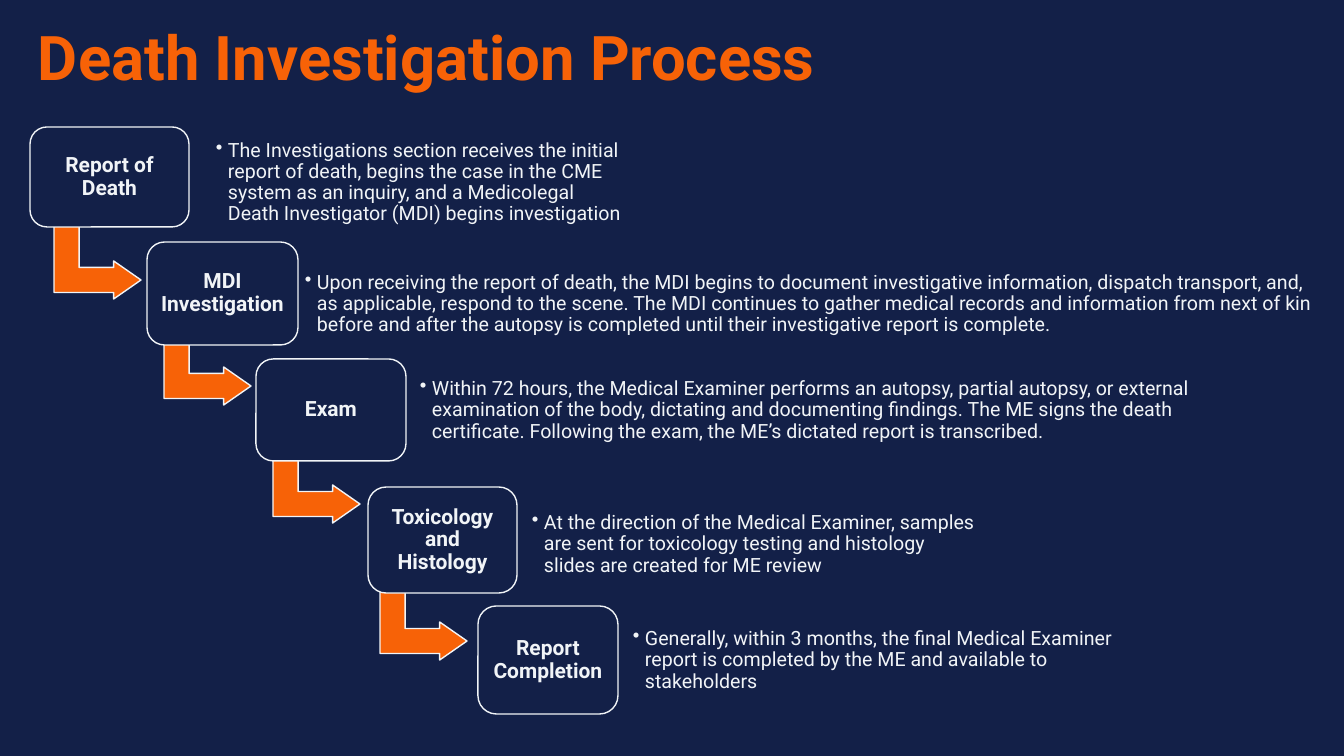
from collections import namedtuple

from lxml.etree import SubElement
from pptx import Presentation
from pptx.dml.color import RGBColor
from pptx.enum.shapes import MSO_SHAPE
from pptx.enum.text import MSO_ANCHOR, PP_ALIGN
from pptx.oxml.ns import qn
from pptx.util import Emu, Pt

EMU_PER_PIXEL = 914400 / 100.8
FONT = "Roboto"
COLORS = {"navy": "132048", "orange": "F76207", "white": "F1F4F7"}
INSET = 6
HANGING = 12
ARROW_WIDTH, ARROW_HEIGHT = 87, 76

Box = namedtuple("Box", "left top width height")
Step = namedtuple("Step", "label detail label_box detail_box arrow_corner")

STEPS = [
    Step("Report of Death",
         "The Investigations section receives the initial report of death, begins the case "
         "in the CME system as an inquiry, and a Medicolegal Death Investigator (MDI) begins "
         "investigation",
         Box(30, 127, 159, 100), Box(210, 146, 419, 73), (54, 223)),
    Step("MDI Investigation",
         "Upon receiving the report of death, the MDI begins to document investigative "
         "information, dispatch transport, and, as applicable, respond to the scene. The MDI "
         "continues to gather medical records and information from next of kin before and "
         "after the autopsy is completed until their investigative report is complete.",
         Box(147, 242, 151, 103), Box(299, 275, 1025, 58), (164, 329)),
    Step("Exam",
         "Within 72 hours, the Medical Examiner performs an autopsy, partial autopsy, or "
         "external examination of the body, dictating and documenting findings. The ME signs "
         "the death certificate. Following the exam, the ME’s dictated report is transcribed.",
         Box(256, 359, 150, 102), Box(414, 374, 830, 73), (273, 447)),
    Step("Toxicology and Histology",
         "At the direction of the Medical Examiner, samples are sent for toxicology testing "
         "and histology slides are created for ME review",
         Box(368, 487, 149, 106), Box(526, 508, 457, 73), (380, 584)),
    Step("Report Completion",
         "Generally, within 3 months, the final Medical Examiner report is completed by the "
         "ME and available to stakeholders",
         Box(478, 606, 140, 108), Box(627, 624, 499, 73), None),
]


def px(value):
    return Emu(round(value * EMU_PER_PIXEL))


def place(box):
    return [px(value) for value in box]


def color(name):
    return RGBColor.from_string(COLORS[name])


def write(shape, text, size, color_name, bold=False, align=PP_ALIGN.LEFT, inset=INSET,
          bullet=False):
    frame = shape.text_frame
    frame.word_wrap = True
    frame.vertical_anchor = MSO_ANCHOR.MIDDLE
    frame.margin_left = frame.margin_right = px(inset)
    frame.margin_top = frame.margin_bottom = px(INSET)
    para = frame.paragraphs[0]
    para.alignment = align
    para.line_spacing = 0.9
    if bullet:
        properties = para._p.get_or_add_pPr()
        properties.set("marL", str(px(HANGING)))
        properties.set("indent", str(-px(HANGING)))
        SubElement(properties, qn("a:buChar")).set("char", "•")
    span = para.add_run()
    span.text = text
    span.font.name = FONT
    span.font.size = Pt(size)
    span.font.bold = bold
    span.font.color.rgb = color(color_name)


def add_outlined(page, kind, box, fill, adjustments):
    shape = page.shapes.add_shape(kind, *place(box))
    shape.shadow.inherit = False
    shape.fill.solid()
    shape.fill.fore_color.rgb = color(fill)
    shape.line.color.rgb = color("white")
    shape.line.width = Pt(1)
    for index, value in enumerate(adjustments):
        shape.adjustments[index] = value
    return shape


def add_title(page, box):
    title = page.shapes.add_textbox(*place(box))
    write(title, "Death Investigation Process", 44, "orange", bold=True, inset=10)


def add_arrow(page, box):
    shift = (box.width - box.height) / 2
    upright = Box(box.left + shift, box.top - shift, box.height, box.width)
    arrow = add_outlined(page, MSO_SHAPE.BENT_UP_ARROW, upright, "orange", [0.33, 0.25, 0.36])
    arrow.rotation = 90


def add_step(page, step):
    if step.arrow_corner:
        add_arrow(page, Box(*step.arrow_corner, ARROW_WIDTH, ARROW_HEIGHT))
    label = add_outlined(page, MSO_SHAPE.ROUNDED_RECTANGLE, step.label_box, "navy", [0.17])
    write(label, step.label, 15, "white", bold=True, align=PP_ALIGN.CENTER)
    detail = page.shapes.add_textbox(*place(step.detail_box))
    write(detail, step.detail, 14, "white", bullet=True)


def main():
    deck = Presentation()
    deck.slide_width, deck.slide_height = px(1344), px(756)
    page = deck.slides.add_slide(deck.slide_layouts[6])
    page.background.fill.solid()
    page.background.fill.fore_color.rgb = color("navy")
    add_title(page, Box(28, 13, 1058, 94))
    for step in STEPS:
        add_step(page, step)
    deck.save("out.pptx")


if __name__ == "__main__":
    main()
